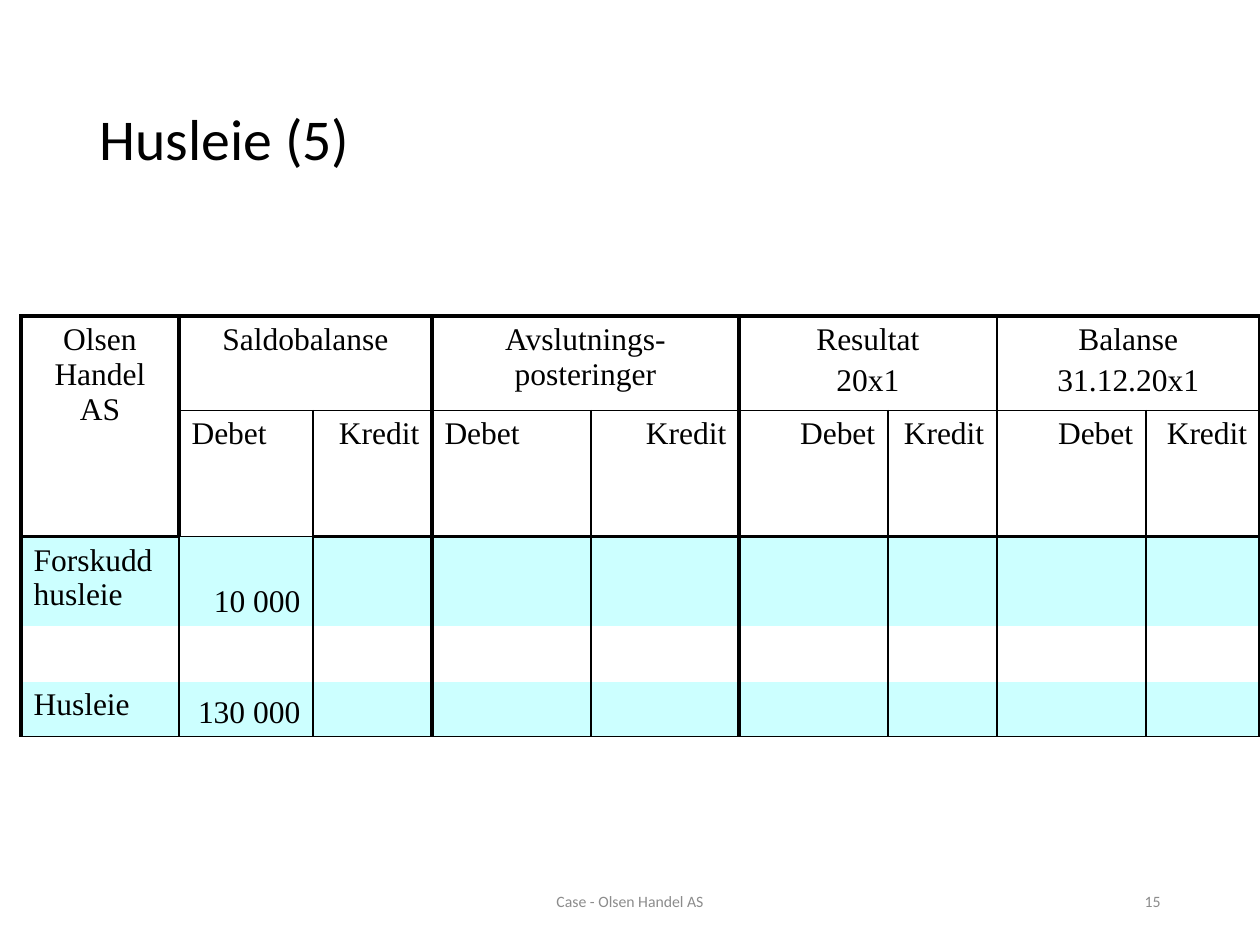
"""Builds the prepaid rent worksheet slide of an accounting case."""
from dataclasses import dataclass

import pptx
import pptx.dml.color
import pptx.enum.text
import pptx.oxml
import pptx.oxml.ns
import pptx.util

ALIGN = pptx.enum.text.PP_ALIGN
ANCHOR = pptx.enum.text.MSO_ANCHOR
PX_PER_INCH = 126


@dataclass(frozen=True)
class Theme:
    ink: str = "000000"
    muted: str = "8C8C8C"
    band: str = "CCFFFF"
    heading_font: str = "Calibri"
    ledger_font: str = "Times New Roman"
    title_size: int = 33
    ledger_size: int = 18
    footer_size: int = 9
    paragraph_gap: float = 3.6
    thin: float = 1
    thick: float = 2.25


def px(length):
    return pptx.util.Emu(round(length * 914400 / PX_PER_INCH))


class SlideBuilder:
    def __init__(self, slide, theme):
        self.slide = slide
        self.theme = theme

    def set_text(self, frame, text, font, size, color, align, gap=0):
        frame.text = text
        for paragraph in frame.paragraphs:
            paragraph.alignment = align
            paragraph.space_before = pptx.util.Pt(gap)
            for run in paragraph.runs:
                run.font.name = font
                run.font.size = pptx.util.Pt(size)
                run.font.color.rgb = pptx.dml.color.RGBColor.from_string(color)

    def label(self, box, text, size, color, align):
        frame = self.slide.shapes.add_textbox(*map(px, box)).text_frame
        frame.word_wrap = True
        frame.vertical_anchor = ANCHOR.MIDDLE
        self.set_text(frame, text, self.theme.heading_font, size, color, align)
        return frame

    def table(self, left, top, widths, heights):
        frame = self.slide.shapes.add_table(
            len(heights), len(widths), px(left), px(top), px(sum(widths)), px(sum(heights)))
        table = frame.table
        table.first_row = table.horz_banding = False
        for column, width in zip(table.columns, widths):
            column.width = px(width)
        for row, height in zip(table.rows, heights):
            row.height = px(height)
        return table

    def entry(self, cell, text, align, anchor=ANCHOR.TOP):
        theme = self.theme
        cell.vertical_anchor = anchor
        self.set_text(cell.text_frame, text, theme.ledger_font, theme.ledger_size,
                      theme.ink, align, theme.paragraph_gap)

    def fill(self, cell, color):
        if color:
            cell.fill.solid()
            cell.fill.fore_color.rgb = pptx.dml.color.RGBColor.from_string(color)
        else:
            cell.fill.background()

    def borders(self, cell, **weights):
        properties = cell._tc.get_or_add_tcPr()
        for position, side in enumerate("LRTB"):
            weight = weights[side]
            paint = (f'<a:solidFill><a:srgbClr val="{self.theme.ink}"/></a:solidFill>'
                     if weight else "<a:noFill/>")
            line = pptx.oxml.parse_xml(
                f'<a:ln{side} {pptx.oxml.ns.nsdecls("a")} w="{int(pptx.util.Pt(weight))}">'
                f"{paint}</a:ln{side}>")
            properties.insert(position, line)


def add_ledger(builder):
    theme = builder.theme
    thin, thick = theme.thin, theme.thick
    widths = [158, 134, 119, 159, 148, 149, 109, 149, 114]
    heights = [88, 117, 89, 56, 55]
    ledger = builder.table(21, 316, widths, heights)

    ledger.cell(0, 0).merge(ledger.cell(1, 0))
    builder.entry(ledger.cell(0, 0), "Olsen Handel AS", ALIGN.CENTER)
    sections = ["Saldobalanse", "Avslutnings-posteringer", "Resultat\n20x1", "Balanse\n31.12.20x1"]
    debit_aligns = [ALIGN.LEFT, ALIGN.LEFT, ALIGN.RIGHT, ALIGN.RIGHT]
    for number, (section, debit_align) in enumerate(zip(sections, debit_aligns)):
        debit = 1 + 2 * number
        ledger.cell(0, debit).merge(ledger.cell(0, debit + 1))
        builder.entry(ledger.cell(0, debit), section, ALIGN.CENTER)
        builder.entry(ledger.cell(1, debit), "Debet", debit_align)
        builder.entry(ledger.cell(1, debit + 1), "Kredit", ALIGN.RIGHT)

    accounts = {2: ("Forskudd husleie", "10 000"), 4: ("Husleie", "130 000")}
    for row, (account, balance) in accounts.items():
        builder.entry(ledger.cell(row, 0), account, ALIGN.LEFT)
        builder.entry(ledger.cell(row, 1), balance, ALIGN.RIGHT, ANCHOR.BOTTOM)

    def vertical(row, edge):
        heavy = edge in (0, 3, 5, len(widths)) or (edge == 1 and row < 2)
        return thick if heavy else thin

    def horizontal(edge, column):
        if edge == 2 and column == 1:
            return thin
        return {0: thick, 1: thin, 2: thick, len(heights): thin}.get(edge, 0)

    for row in range(len(heights)):
        for column in range(len(widths)):
            cell = ledger.cell(row, column)
            if cell.is_spanned:
                continue
            builder.fill(cell, theme.band if row in accounts else None)
            builder.borders(
                cell,
                L=vertical(row, column),
                R=vertical(row, column + cell.span_width),
                T=horizontal(row, column),
                B=horizontal(row + cell.span_height, column))


def main():
    deck = pptx.Presentation()
    deck.slide_width, deck.slide_height = px(1260), px(945)
    theme = Theme()
    builder = SlideBuilder(deck.slides.add_slide(deck.slide_layouts[6]), theme)
    title = builder.label((87, 50, 1086, 183), "Husleie (5)", theme.title_size, theme.ink, ALIGN.LEFT)
    title.paragraphs[0].line_spacing = 0.9
    add_ledger(builder)
    builder.label((417, 876, 426, 50), "Case - Olsen Handel AS",
                  theme.footer_size, theme.muted, ALIGN.CENTER)
    builder.label((890, 876, 283, 50), "15", theme.footer_size, theme.muted, ALIGN.RIGHT)
    deck.save("out.pptx")


if __name__ == "__main__":
    main()
